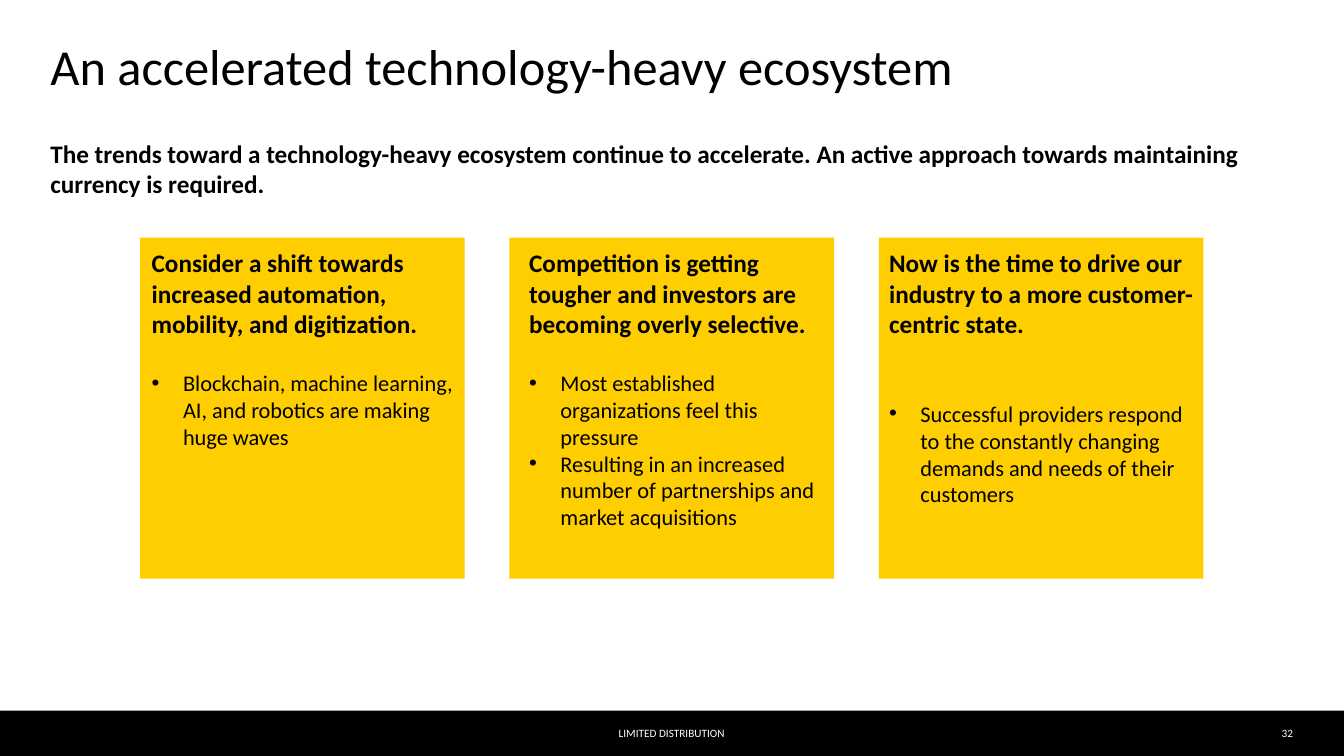
from lxml.etree import SubElement
from pptx import Presentation
from pptx.dml.color import RGBColor
from pptx.enum.shapes import MSO_SHAPE as Shape
from pptx.enum.text import MSO_ANCHOR as Anchor, MSO_AUTO_SIZE as Auto, PP_ALIGN as Align
from pptx.oxml.ns import qn
from pptx.util import Cm, Pt

BLACK = RGBColor(0x00, 0x00, 0x00)
WHITE = RGBColor(0xFF, 0xFF, 0xFF)
GOLD = RGBColor(0xFF, 0xCE, 0x00)
FONT = "Calibri"
WIDTH, HEIGHT = 33.87, 19.05
BAR_TOP, BAR_HIGH = 17.91, 1.14

CARDS = [
    ("Consider a shift towards increased automation, mobility, and digitization.",
     ["Blockchain, machine learning, AI, and robotics are making huge waves"], 22),
    ("Competition is getting tougher and investors are becoming overly selective.",
     ["Most established organizations feel this pressure",
      "Resulting in an increased number of partnerships and market acquisitions"], 22),
    ("Now is the time to drive our industry to a more customer-centric state.",
     ["Successful providers respond to the constantly changing demands and needs "
      "of their customers"], 44),
]


def write(para, text, size=18, bold=False, color=BLACK, align=Align.LEFT,
          before=0, line=1.0, bullet=False):
    props = para._p.get_or_add_pPr()
    props.set("marL", str(Cm(0.79) if bullet else 0))
    props.set("indent", str(-Cm(0.79) if bullet else 0))
    if bullet:
        SubElement(props, qn("a:buFont")).set("typeface", "Arial")
        SubElement(props, qn("a:buChar")).set("char", "•")
    else:
        SubElement(props, qn("a:buNone"))
    para.alignment = align
    para.space_before = Pt(before)
    para.space_after = Pt(0)
    para.line_spacing = line
    run = para.add_run()
    run.text = text
    font = run.font
    font.name, font.size, font.bold = FONT, Pt(size), bold
    font.color.rgb = color


def frame(shape, inset=0, anchor=Anchor.TOP):
    text = shape.text_frame
    text.word_wrap = True
    text.auto_size = Auto.NONE
    text.vertical_anchor = anchor
    text.margin_left = text.margin_right = Cm(inset)
    text.margin_top = text.margin_bottom = Cm(inset)
    return text


def fill_holder(holder, text, top, high, **style):
    holder.left, holder.top = Cm(1.27), Cm(top)
    holder.width, holder.height = Cm(31.32), Cm(high)
    write(frame(holder).paragraphs[0], text, **style)


def add_block(slide, left, top, wide, high, color):
    block = slide.shapes.add_shape(Shape.RECTANGLE, Cm(left), Cm(top), Cm(wide), Cm(high))
    block.shadow.inherit = False
    block.fill.solid()
    block.fill.fore_color.rgb = color
    block.line.fill.background()
    return block


def add_card(slide, left, head, points, gap):
    text = frame(add_block(slide, left, 5.99, 8.18, 8.59, GOLD), 0.25)
    text._txBody.bodyPr.set("anchorCtr", "1")
    write(text.paragraphs[0], head, bold=True)
    for rank, point in enumerate(points):
        write(text.add_paragraph(), point, size=16, bullet=True,
              before=0 if rank else gap)


def add_label(slide, text, left, wide, align):
    box = slide.shapes.add_textbox(Cm(left), Cm(BAR_TOP), Cm(wide), Cm(BAR_HIGH))
    write(frame(box, anchor=Anchor.MIDDLE).paragraphs[0], text, size=8,
          color=WHITE, align=align)


def main():
    deck = Presentation()
    deck.slide_width, deck.slide_height = Cm(WIDTH), Cm(HEIGHT)
    slide = deck.slides.add_slide(deck.slide_layouts[1])
    title, body = slide.placeholders
    fill_holder(title, "An accelerated technology-heavy ecosystem", 1.07, 1.68,
                size=36, line=0.9)
    fill_holder(body, "The trends toward a technology-heavy ecosystem continue to "
                "accelerate. An active approach towards maintaining currency is required.",
                3.48, 13.46, bold=True)
    add_block(slide, 0, BAR_TOP, WIDTH, BAR_HIGH, BLACK)
    add_label(slide, "32", 31.45, 1.14, Align.RIGHT)
    add_label(slide, "LIMITED DISTRIBUTION", 5.5, 22.86, Align.CENTER)
    for rank, (head, points, gap) in enumerate(CARDS):
        add_card(slide, 3.53 + rank * 9.31, head, points, gap)
    deck.save("out.pptx")


if __name__ == "__main__":
    main()
